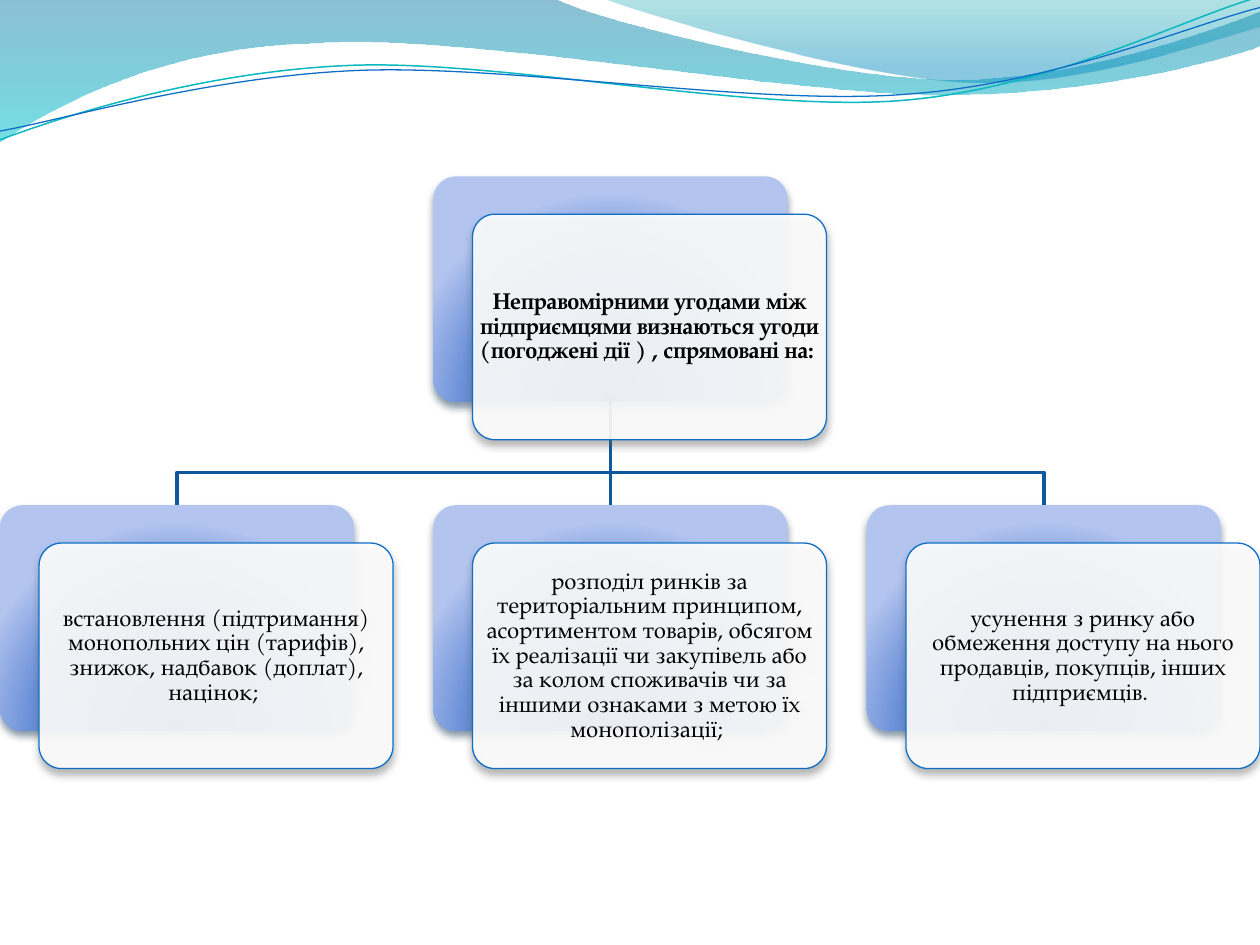
from lxml import etree
from pptx import Presentation
from pptx.dml.color import RGBColor as RGB
from pptx.enum.shapes import MSO_SHAPE as SHAPE
from pptx.enum.text import MSO_ANCHOR as ANCHOR, MSO_AUTO_SIZE as FIT, PP_ALIGN as ALIGN
from pptx.oxml.ns import qn
from pptx.util import Inches, Pt

HEADING = "Неправомірними угодами між підприємцями визнаються угоди (погоджені дії ) , спрямовані на: "
AGREEMENTS = [
    "встановлення (підтримання) монопольних цін (тарифів), знижок, надбавок (доплат), націнок; ",
    "розподіл ринків за територіальним принципом, асортиментом товарів, обсягом їх реалізації "
    "чи закупівель або за колом споживачів чи за іншими ознаками з метою їх монополізації; ",
    "усунення з ринку або обмеження доступу на нього продавців, покупців, інших підприємців. ",
]

THEME = {
    "font": "TeX Gyre Pagella", "size": 13, "ink": "000000",
    "tree": ("0C599F", 2), "border": ("0F6FC6", 0.75),
    "front": ("FFFFFF", 90),
    "back": [(0, "003D87", 100), (68, "668DD7", 100), (100, "B3C4EF", 100)],
    "back_shadow": "042747", "front_shadow": "5A5A5A",
}

BANDS = [
    ([(0, 0), (4.4, -0.01),
      (4.76, 0.17, 6.64, 0.63, 7.58, 0.63), (8.53, 0.63, 9.58, 0.26, 10, 0.09),
      (10.01, 0.36),
      (9.83, 0.44, 8.7, 0.76, 7.46, 0.75), (6.22, 0.75, 3.82, 0.28, 2.57, 0.34),
      (1.29, 0.36, 0.46, 0.83, -0.01, 1.13), (0, 0)],
     [(0, "0074A1", 45), (100, "00C6CF", 55)]),
    ([(4.79, -0.01),
      (5.09, 0.11, 6.82, 0.62, 7.69, 0.65), (8.56, 0.69, 9.61, 0.32, 10, 0.21),
      (10, 0), (4.79, -0.01)],
     [(0, "00A1A9", 30), (80, "008BBF", 45)]),
]
RIPPLES = [
    ([(0, 1.11), (0.48, 0.93, 1.58, 0.57, 2.77, 0.52),
      (3.95, 0.47, 5.93, 0.89, 7.13, 0.8), (8.33, 0.71, 9.38, 0.15, 9.98, -0.02)],
     ("0AB8BF", 0.85)),
    ([(0, 1.04), (0.47, 0.96, 1.64, 0.61, 2.83, 0.56),
      (4.03, 0.51, 5.97, 0.84, 7.17, 0.75), (8.36, 0.67, 9.41, 0.21, 10, 0.06)],
     ("0F6FC6", 0.75)),
]

CARD_W, CARD_H = 2.81, 1.79
PITCH = 3.44
SHIFT_X, SHIFT_Y = 0.31, 0.3
HEAD_TOP, ROW_TOP, BRANCH_Y = 1.4, 4.01, 3.75
TRUNK_PAD = 0.05


def add_xml(parent, tag, **attributes):
    return etree.SubElement(parent, qn(tag), {key: str(value) for key, value in attributes.items()})


def add_color(parent, color, alpha):
    add_xml(add_xml(parent, "a:srgbClr", val=color), "a:alpha", val=alpha * 1000)


def fill_gradient(shape, stops, radial=False):
    shape.fill.gradient()
    gradient = shape._element.spPr.find(qn("a:gradFill"))
    for child in list(gradient):
        gradient.remove(child)
    stop_list = add_xml(gradient, "a:gsLst")
    for position, color, alpha in stops:
        add_color(add_xml(stop_list, "a:gs", pos=position * 1000), color, alpha)
    if radial:
        add_xml(add_xml(gradient, "a:path", path="circle"), "a:fillToRect",
                l=50000, t=130000, r=50000, b=-30000)
    else:
        add_xml(gradient, "a:lin", ang=5400000, scaled=1)


def fill_clear(shape, color, alpha):
    shape.fill.solid()
    shape.fill.fore_color.rgb = RGB.from_string(color)
    add_xml(shape._element.spPr.find(qn("a:solidFill"))[0], "a:alpha", val=alpha * 1000)


def cast_shadow(shape, color):
    shadow = add_xml(shape._element.spPr.find(qn("a:effectLst")), "a:outerShdw",
                     blurRad=Pt(4.5), dist=Pt(3), dir=5400000, algn="ctr", rotWithShape=0)
    add_color(shadow, color, 48)


def set_line(shape, color, width):
    shape.line.color.rgb = RGB.from_string(color)
    shape.line.width = Pt(width)


def add_outline(shapes, segments, close=False, pad=0):
    start, *rest = [(Inches(s[-2]), Inches(s[-1])) for s in segments]
    builder = shapes.build_freeform(*start, scale=1.0)
    builder.add_line_segments(rest[:-1] if close else rest, close=close)
    outline = builder.convert_to_shape()
    outline.shadow.inherit = False
    outline.left -= Inches(pad)
    outline.width += 2 * Inches(pad)
    drawing = next(outline._element.spPr.iter(qn("a:path")))
    drawing.set("w", str(outline.width))
    for child in list(drawing):
        drawing.remove(child)
    for index, segment in enumerate(segments):
        tag = "a:moveTo" if index == 0 else "a:lnTo" if len(segment) == 2 else "a:cubicBezTo"
        step = add_xml(drawing, tag)
        for x, y in zip(segment[::2], segment[1::2]):
            add_xml(step, "a:pt", x=Inches(x) - outline.left, y=Inches(y) - outline.top)
    if close:
        add_xml(drawing, "a:close")
    return outline


def add_open_line(shapes, segments, style, pad=0):
    outline = add_outline(shapes, segments, pad=pad)
    outline.fill.background()
    set_line(outline, *style)


def write(frame, text, bold=False):
    frame.text = text
    frame_format = {"word_wrap": True, "auto_size": FIT.NONE, "vertical_anchor": ANCHOR.MIDDLE}
    for side in ("left", "right", "top", "bottom"):
        frame_format["margin_" + side] = Inches(0.05 if bold else 0)
    paragraph = frame.paragraphs[0]
    formats = [
        (frame, frame_format),
        (paragraph, {"alignment": ALIGN.CENTER, "line_spacing": 0.9}),
        (paragraph.runs[0].font, {"name": THEME["font"], "size": Pt(THEME["size"]), "bold": bold}),
        (paragraph.runs[0].font.color, {"rgb": RGB.from_string(THEME["ink"])}),
    ]
    for target, values in formats:
        for name, value in values.items():
            setattr(target, name, value)


def add_card(shapes, left, top):
    cards = []
    for x, y, shadow in ((left, top, THEME["back_shadow"]),
                         (left + SHIFT_X, top + SHIFT_Y, THEME["front_shadow"])):
        card = shapes.add_shape(SHAPE.ROUNDED_RECTANGLE, Inches(x), Inches(y),
                                Inches(CARD_W), Inches(CARD_H))
        card.adjustments[0] = 0.1
        card.shadow.inherit = False
        cast_shadow(card, shadow)
        cards.append(card)
    back, front = cards
    fill_gradient(back, THEME["back"], radial=True)
    back.line.fill.background()
    fill_clear(front, *THEME["front"])
    set_line(front, *THEME["border"])
    return front


def add_branches(shapes):
    root_x, root_y = PITCH + CARD_W / 2, HEAD_TOP + CARD_H
    for column in reversed(range(len(AGREEMENTS))):
        x = column * PITCH + CARD_W / 2
        straight = x == root_x
        bend = [] if straight else [(root_x, BRANCH_Y), (x, BRANCH_Y)]
        add_open_line(shapes, [(root_x, root_y), *bend, (x, ROW_TOP)], THEME["tree"],
                      pad=TRUNK_PAD if straight else 0)


def main():
    deck = Presentation()
    deck.slide_width, deck.slide_height = Inches(10), Inches(7.5)
    slide = deck.slides.add_slide(deck.slide_layouts[5])
    shapes = slide.shapes

    for segments, stops in BANDS:
        band = add_outline(shapes, segments, close=True)
        fill_gradient(band, stops)
        band.line.fill.background()
    for segments, style in RIPPLES:
        add_open_line(shapes, segments, style)

    add_branches(shapes)
    head = add_card(shapes, PITCH, HEAD_TOP)
    title = shapes.title
    for name in ("left", "top", "width", "height"):
        setattr(title, name, getattr(head, name))
    write(title.text_frame, HEADING, bold=True)
    head._element.addnext(title._element)

    for column, agreement in enumerate(AGREEMENTS):
        write(add_card(shapes, column * PITCH, ROW_TOP).text_frame, agreement)

    deck.save("out.pptx")


if __name__ == "__main__":
    main()
